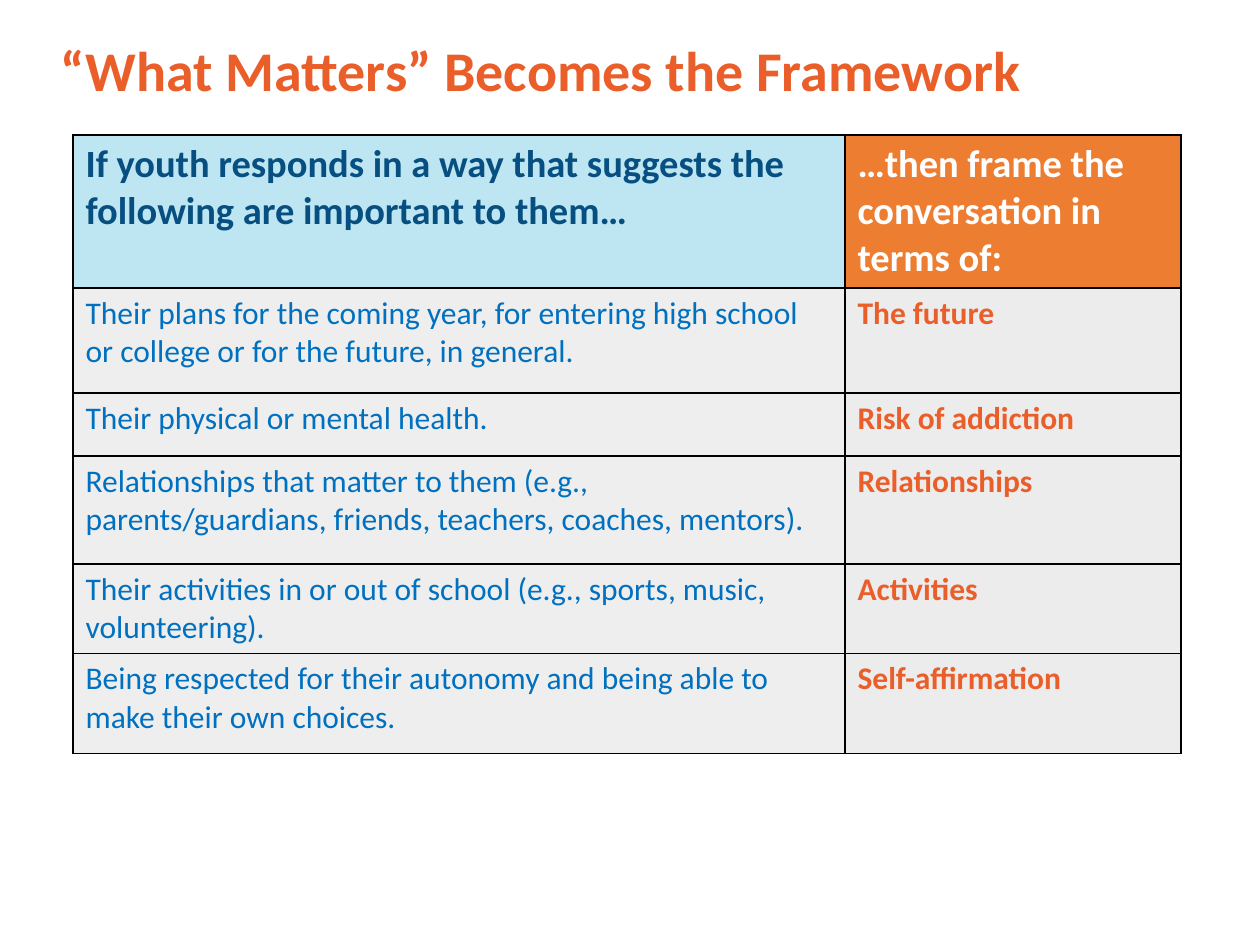
from lxml import etree
from pptx import Presentation
from pptx import util as u
from pptx.dml.color import RGBColor
from pptx.enum import text
from pptx.oxml.ns import qn

PX = 914400 // 126
FONT = "Calibri"
ORANGE, NAVY, BLUE, WHITE = "EA5E29", "064F80", "0070C0", "FFFFFF"

HEADERS = (
    "If youth responds in a way that suggests the following are important to them…",
    "…then frame the conversation in terms of:",
)
TOPICS = [
    ("Their plans for the coming year, for entering high school or college or for the future, in general.",
     "The future"),
    ("Their physical or mental health.", "Risk of addiction"),
    ("Relationships that matter to them (e.g., parents/guardians, friends, teachers, coaches, mentors).",
     "Relationships"),
    ("Their activities in or out of school (e.g., sports, music, volunteering).", "Activities"),
    ("Being respected for their autonomy and being able to make their own choices.",
     "Self-affirmation"),
]
COLUMN_WIDTHS = [772, 336]
ROW_HEIGHTS = [137, 105, 63, 108, 87, 100]

# Per column: text colour, bold, fill colour, fill opacity in percent
HEADER_STYLES = [(NAVY, True, "BEE6F2", 100), (WHITE, True, "ED7D31", 100)]
TOPIC_STYLES = [(BLUE, False, "BFBFBF", 25), (ORANGE, True, "E7E6E6", 75)]


def px(n):
    return u.Emu(n * PX)


def color(value):
    return RGBColor.from_string(value)


def format_text(tf, size, hex_color, bold):
    for p in tf.paragraphs:
        for r in p.runs:
            r.font.name = FONT
            r.font.size = u.Pt(size)
            r.font.bold = bold
            r.font.color.rgb = color(hex_color)


def add_title(s, title):
    sp = s.shapes.title
    sp.left, sp.top, sp.width, sp.height = px(48), px(33), px(1166), px(81)
    tf = sp.text_frame
    tf.text = title
    tf.word_wrap = True
    tf.auto_size = text.MSO_AUTO_SIZE.NONE
    tf.vertical_anchor = text.MSO_ANCHOR.MIDDLE
    tf.paragraphs[0].alignment = text.PP_ALIGN.LEFT
    tf.paragraphs[0].line_spacing = 0.9
    format_text(tf, 32, ORANGE, True)


def add_borders(cell):
    tc_pr = cell._tc.get_or_add_tcPr()
    for side in ("lnL", "lnR", "lnT", "lnB"):
        line = etree.SubElement(tc_pr, qn(f"a:{side}"), w=str(u.Pt(1)))
        fill = etree.SubElement(line, qn("a:solidFill"))
        etree.SubElement(fill, qn("a:srgbClr"), val="000000")


def fill_cell(cell, hex_color, opacity):
    cell.fill.solid()
    cell.fill.fore_color.rgb = color(hex_color)
    if opacity < 100:
        clr = cell._tc.tcPr.find(f"{qn('a:solidFill')}/{qn('a:srgbClr')}")
        etree.SubElement(clr, qn("a:alpha"), val=str(opacity * 1000))


def add_row(cells, texts, size, styles):
    for cell, words, (text_color, bold, fill, opacity) in zip(cells, texts, styles):
        cell.text_frame.text = words
        format_text(cell.text_frame, size, text_color, bold)
        add_borders(cell)
        fill_cell(cell, fill, opacity)


def add_framework_table(s):
    frame = s.shapes.add_table(len(ROW_HEIGHTS), len(COLUMN_WIDTHS), px(73), px(135),
                               px(sum(COLUMN_WIDTHS)), px(sum(ROW_HEIGHTS)))
    table = frame.table
    table.horz_banding = False
    for column, width in zip(table.columns, COLUMN_WIDTHS):
        column.width = px(width)
    for row, height in zip(table.rows, ROW_HEIGHTS):
        row.height = px(height)

    header, *topics = table.rows
    add_row(header.cells, HEADERS, 22, HEADER_STYLES)
    for row, texts in zip(topics, TOPICS):
        add_row(row.cells, texts, 18, TOPIC_STYLES)


def main():
    prs = Presentation()
    prs.slide_width, prs.slide_height = u.Inches(10), u.Inches(7.5)
    s = prs.slides.add_slide(prs.slide_layouts[5])
    s.background.fill.solid()
    s.background.fill.fore_color.rgb = color(WHITE)
    add_title(s, "“What Matters” Becomes the Framework")
    add_framework_table(s)
    prs.save("out.pptx")


if __name__ == "__main__":
    main()
